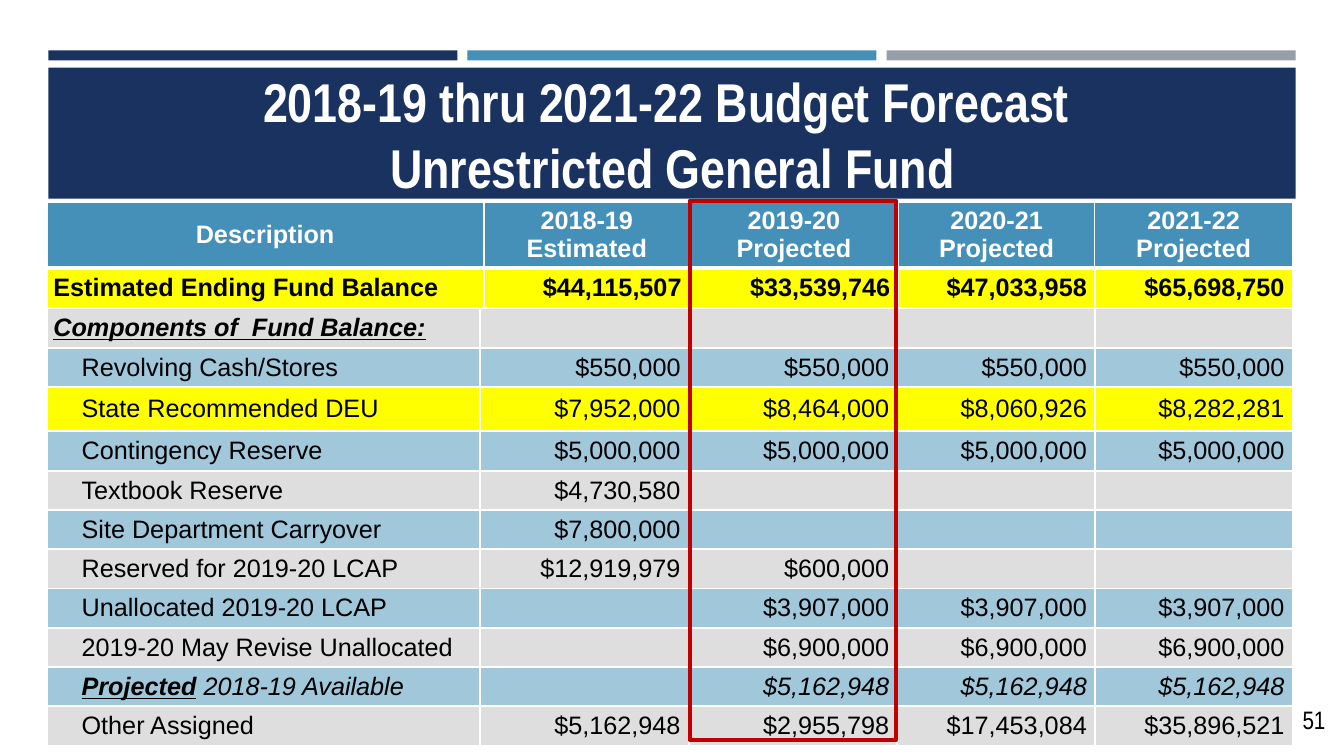
import pptx
import pptx.util
import pptx.dml.color
import pptx.enum.shapes
import pptx.enum.text
import pptx.oxml
import pptx.oxml.ns
from dataclasses import dataclass

Inches = pptx.util.Inches
Pt = pptx.util.Pt
ALIGN = pptx.enum.text.PP_ALIGN
MIDDLE = pptx.enum.text.MSO_ANCHOR.MIDDLE


@dataclass(frozen=True)
class Theme:
    navy: str = "1A3260"
    blue: str = "4590B8"
    slate: str = "969FA7"
    grey: str = "BFBFBF"
    yellow: str = "FFFF00"
    red: str = "C00000"
    white: str = "FFFFFF"
    black: str = "000000"
    title_font: str = "Arial Narrow"
    table_font: str = "Arial"
    title_size: int = 39
    text_size: int = 18


THEME = Theme()

YEARS = [["2018-19", "Estimated"], ["2019-20", "Projected"],
         ["2020-21", "Projected"], ["2021-22", "Projected"]]
BALANCE = ["$44,115,507", "$33,539,746", "$47,033,958", "$65,698,750"]
COMPONENTS = [
    ("Revolving Cash/Stores", ["$550,000"] * 4),
    ("State Recommended DEU", ["$7,952,000", "$8,464,000", "$8,060,926", "$8,282,281"]),
    ("Contingency Reserve", ["$5,000,000"] * 4),
    ("Textbook Reserve", ["$4,730,580", "", "", ""]),
    ("Site Department Carryover", ["$7,800,000", "", "", ""]),
    ("Reserved for 2019-20 LCAP", ["$12,919,979", "$600,000", "", ""]),
    ("Unallocated 2019-20 LCAP", [""] + ["$3,907,000"] * 3),
    ("2019-20 May Revise Unallocated", [""] + ["$6,900,000"] * 3),
    ("Projected 2018-19 Available", [""] + ["$5,162,948"] * 3),
    ("Other Assigned", ["$5,162,948", "$2,955,798", "$17,453,084", "$35,896,521"]),
]
HIGHLIGHTED = "State Recommended DEU"
EMPHASISED = "Projected"


def rgb(color):
    return pptx.dml.color.RGBColor.from_string(color)


def add_span(para, text, size=THEME.text_size, font=THEME.table_font,
             color=THEME.black, bold=False, italic=False, underline=False):
    span = para.add_run()
    span.text = text
    span.font.size = Pt(size)
    span.font.name = font
    span.font.color.rgb = rgb(color)
    span.font.bold, span.font.italic, span.font.underline = bold, italic, underline


def add_bar(page, left, top, width, height, fill=None, line=None):
    bar = page.shapes.add_shape(pptx.enum.shapes.MSO_SHAPE.RECTANGLE,
                                Inches(left), Inches(top), Inches(width), Inches(height))
    bar.shadow.inherit = False
    if fill:
        bar.fill.solid()
        bar.fill.fore_color.rgb = rgb(fill)
    else:
        bar.fill.background()
    if line:
        bar.line.color.rgb = rgb(line)
        bar.line.width = Pt(3)
    else:
        bar.line.fill.background()


def add_textbox(page, left, top, width, height):
    box = page.shapes.add_textbox(Inches(left), Inches(top), Inches(width), Inches(height))
    box.text_frame.word_wrap = True
    return box.text_frame


def add_header(page, left, top, width):
    """Three accent bars above the title band."""
    gap = 0.1
    bar_width = (width - 2 * gap) / 3
    for index, color in enumerate([THEME.navy, THEME.blue, THEME.slate]):
        add_bar(page, left + index * (bar_width + gap), top, bar_width, 0.1, color)
    add_bar(page, left, top + 0.17, width, 1.3, THEME.navy)
    frame = add_textbox(page, left + 0.16, top + 0.27, width - 0.31, 1.11)
    frame.vertical_anchor = MIDDLE
    para = frame.paragraphs[0]
    para.alignment = ALIGN.CENTER
    style = dict(size=THEME.title_size, font=THEME.title_font, color=THEME.white, bold=True)
    add_span(para, "2018-19 thru 2021-22 Budget Forecast ", **style)
    para.add_line_break()
    add_span(para, "Unrestricted General Fund", **style)


def fill_cell(cell, color, borders, opacity=100):
    """Paint a cell; borders are the left, right, top and bottom widths in points."""
    properties = cell._tc.get_or_add_tcPr()
    for side, width in zip(["lnL", "lnR", "lnT", "lnB"], borders):
        properties.append(pptx.oxml.parse_xml(
            f'<a:{side} {pptx.oxml.ns.nsdecls("a")} w="{Pt(width)}"><a:solidFill>'
            f'<a:srgbClr val="{THEME.white}"/></a:solidFill></a:{side}>'))
    cell.fill.solid()
    cell.fill.fore_color.rgb = rgb(color)
    if opacity < 100:
        swatch = properties.find(pptx.oxml.ns.qn("a:solidFill"))[0]
        swatch.append(pptx.oxml.parse_xml(
            f'<a:alpha {pptx.oxml.ns.nsdecls("a")} val="{opacity * 1000}"/>'))


def write_cell(cell, lines, align, margin=0.08, indent=0.0, **style):
    """Write one paragraph per line; a line is a list of (text, extra style) pairs."""
    cell.margin_left, cell.margin_right = Inches(margin + indent), Inches(margin)
    for index, spans in enumerate(lines):
        frame = cell.text_frame
        para = frame.add_paragraph() if index else frame.paragraphs[0]
        para.alignment = align
        for text, extra in spans:
            add_span(para, text, **{**style, **extra})


def add_grid(page, left, top, widths, heights):
    frame = page.shapes.add_table(len(heights), len(widths), Inches(left), Inches(top),
                                  Inches(sum(widths)), Inches(sum(heights)))
    grid = frame.table
    grid.first_row = grid.horz_banding = False
    for column, width in zip(grid.columns, widths):
        column.width = Inches(width)
    for row, height in zip(grid.rows, heights):
        row.height = Inches(height)
    return grid


def paint_row(row, color, inner, top, bottom, opacity=100):
    """Paint every cell, with margins small enough that empty cells keep the row height."""
    last = len(row.cells) - 1
    for index, cell in enumerate(row.cells):
        sides = (inner if index else 3, inner if index < last else 1)
        fill_cell(cell, color, (*sides, top, bottom), opacity)
        cell.vertical_anchor = MIDDLE
        cell.margin_top = cell.margin_bottom = Inches(0.03)


def write_amounts(row, amounts, **style):
    for cell, amount in zip(list(row.cells)[1:], amounts):
        if amount:
            write_cell(cell, [[(amount, {})]], ALIGN.RIGHT, **style)


def add_balance_table(page, left, top):
    grid = add_grid(page, left, top, [4.34, 2.04, 2.07, 1.95, 1.96], [0.65, 0.39])
    heading, balance = grid.rows
    paint_row(heading, THEME.blue, 1, 3, 3)
    for cell, lines in zip(heading.cells, [["Description"]] + YEARS):
        write_cell(cell, [[(line, {})] for line in lines], ALIGN.CENTER, 0.07,
                   color=THEME.white, bold=True)
    paint_row(balance, THEME.yellow, 1.5, 1, 1)
    write_cell(balance.cells[0], [[("Estimated Ending Fund Balance", {})]],
               ALIGN.LEFT, 0.07, bold=True)
    write_amounts(balance, BALANCE, bold=True)


def add_component_table(page, left, top):
    heights = [0.39] + [0.44 if name == HIGHLIGHTED else 0.39 for name, _ in COMPONENTS]
    grid = add_grid(page, left, top, [4.3, 2.07, 2.07, 1.96, 1.96], heights)
    rows = list(grid.rows)
    paint_row(rows[0], THEME.grey, 1.5, 1, 1.5, 50)
    write_cell(rows[0].cells[0], [[("Components of  Fund Balance:", {})]],
               ALIGN.LEFT, 0.07, bold=True, italic=True, underline=True)
    for index, (name, amounts) in enumerate(COMPONENTS):
        row = rows[index + 1]
        if name == HIGHLIGHTED:
            paint_row(row, THEME.yellow, 1.5, 1.5, 1.5)
        else:
            paint_row(row, THEME.grey if index % 2 else THEME.blue, 1.5, 1.5, 1.5, 50)
        emphasised = name.startswith(EMPHASISED)
        spans = [(name, {})]
        if emphasised:
            spans = [(EMPHASISED, dict(bold=True, underline=True)),
                     (name.removeprefix(EMPHASISED), {})]
        write_cell(row.cells[0], [spans], ALIGN.LEFT, 0.07, 0.28, italic=emphasised)
        write_amounts(row, amounts, italic=emphasised)


def add_page_number(page, left, top):
    frame = add_textbox(page, left, top, 0.45, 0.4)
    add_span(frame.paragraphs[0], "51", font=THEME.title_font)


def main():
    deck = pptx.Presentation()
    deck.slide_width, deck.slide_height = Inches(13.33), Inches(7.5)
    page = deck.slides.add_slide(deck.slide_layouts[6])
    add_header(page, 0.48, 0.5, 12.37)
    add_balance_table(page, 0.46, 2)
    add_component_table(page, 0.46, 3.06)
    add_page_number(page, 12.82, 6.94)
    add_bar(page, 6.84, 1.99, 2.05, 5.35, line=THEME.red)
    deck.save("out.pptx")


if __name__ == "__main__":
    main()
